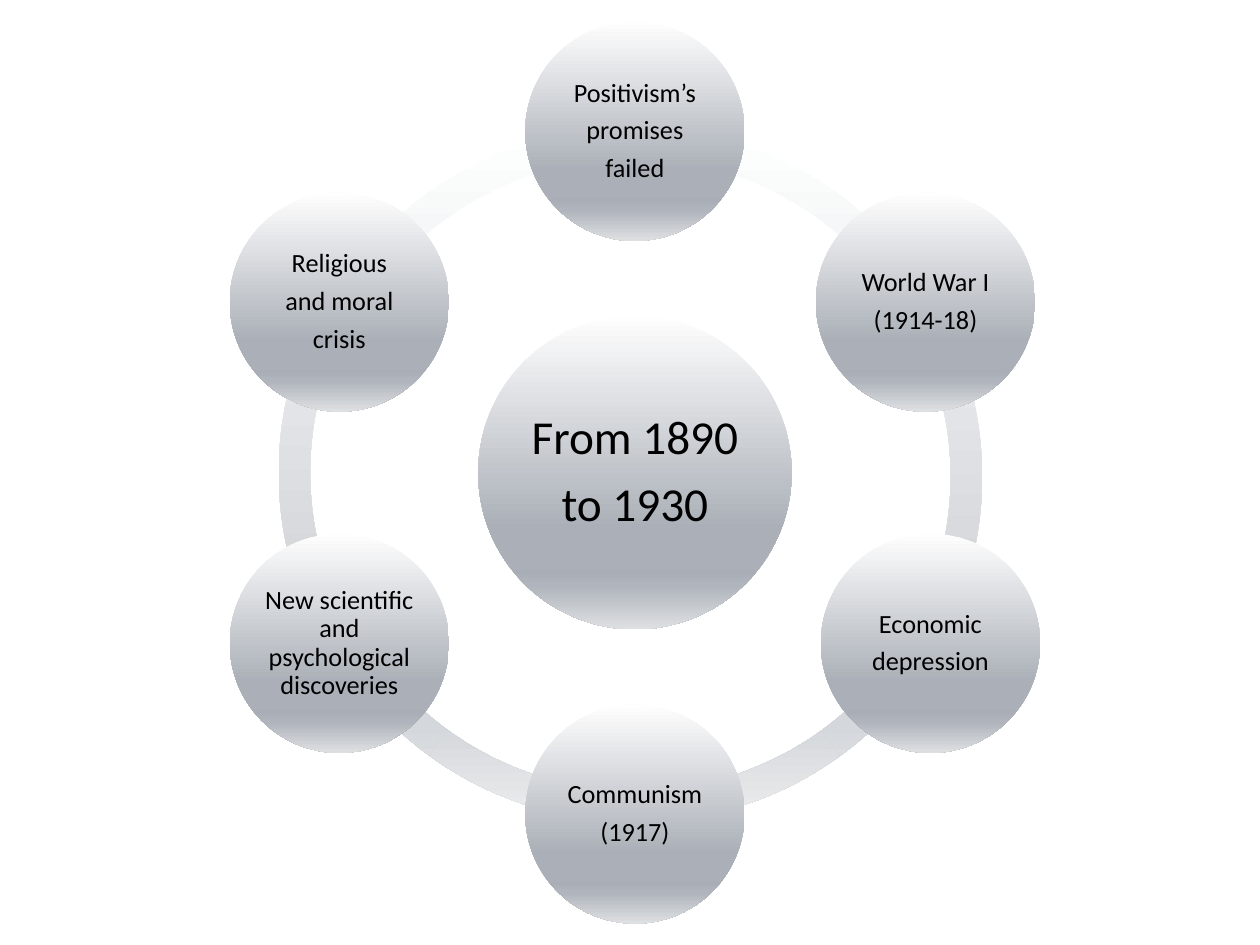
from copy import deepcopy
from math import cos, radians, sin

from pptx import Presentation
from pptx.dml.color import RGBColor
from pptx.enum.shapes import MSO_SHAPE as SHAPE
from pptx.enum.text import MSO_ANCHOR as ANCHOR, PP_ALIGN as ALIGN
from pptx.oxml.ns import qn
from pptx.util import Cm, Pt

STOPS = [0, 0.68, 0.81, 0.86, 1]
RING_COLOURS = ["FEFFFF", "D2D4D8", "D0D3D7", "D4D7DB", "ECEDEE"]
DISC_COLOURS = ["FEFEFE", "ABB0B8", "A8ADB6", "B0B5BD", "DEE0E2"]
CX, CY = 12.8, 9.53  # centre of the cycle, in cm
RING_SIZE = 14.1
ORBIT = 6.88


def rgb(colour):
    return RGBColor.from_string(colour)


def add_gradient_shape(kind, cx, cy, size, colours):
    """Add a square-framed shape around (cx, cy) in cm, shaded from top to bottom."""
    sp = slide.shapes.add_shape(kind, Cm(cx - size / 2), Cm(cy - size / 2), Cm(size), Cm(size))
    sp.shadow.inherit = False
    sp.line.fill.background()
    sp.fill.gradient()
    sp.fill.gradient_angle = 270
    stop_list = sp._element.spPr.find(qn("a:gradFill")).find(qn("a:gsLst"))
    for _ in range(len(STOPS) - len(stop_list)):
        stop_list.append(deepcopy(stop_list[0]))
    for stop, position, colour in zip(sp.fill.gradient_stops, STOPS, colours):
        stop.position = position
        stop.color.rgb = rgb(colour)
    return sp


prs = Presentation()
prs.slide_width, prs.slide_height = Cm(25.4), Cm(19.05)
slide = prs.slides.add_slide(prs.slide_layouts[6])

# Ring: start angle, end angle, horizontal and vertical shift
arcs = [(start, start + 36, 0, 0) for start in (126, 90, 54, 18)]
arcs += [(197.45, 17.46, -0.05, 0.08), (162.55, 198, -0.13, 0)]
for start, end, dx, dy in arcs:
    sp = add_gradient_shape(SHAPE.BLOCK_ARC, CX + dx, CY + dy, RING_SIZE, RING_COLOURS)
    # Angles are stored in 1/60000 degree, adjustments in 1/100000
    sp.adjustments[0] = start * 0.6
    sp.adjustments[1] = end * 0.6
    sp.adjustments[2] = 0.045

# Discs: centre, diameter, font size, inset, text
discs = [(CX, CY, 6.32, 27, 0.1, "From 1890\nto 1930")]
causes = [
    "Positivism’s\npromises\nfailed",
    "World War I\n(1914-18)",
    "Economic\ndepression",
    "Communism\n(1917)",
    "New scientific and psychological discoveries",
    "Religious\nand moral\ncrisis",
]
for i, cause in enumerate(causes):
    angle = radians(60 * i - 90)
    nudge = -0.1 if i == 1 else 0
    discs.append((CX + ORBIT * cos(angle) + nudge, CY + ORBIT * sin(angle), 4.42, 15, 0.05, cause))

for cx, cy, diameter, font_size, inset, text in discs:
    sp = add_gradient_shape(SHAPE.OVAL, cx, cy, diameter, DISC_COLOURS)
    tf = sp.text_frame
    tf.text = text
    tf.word_wrap = True
    tf.vertical_anchor = ANCHOR.MIDDLE
    tf.margin_left = tf.margin_right = tf.margin_top = tf.margin_bottom = Cm(inset)
    for p in tf.paragraphs:
        p.alignment = ALIGN.CENTER
        p.line_spacing = 0.9
        p.space_after = Pt(0.35 * font_size)
        for r in p.runs:
            r.font.name = "Calibri"
            r.font.size = Pt(font_size)
            r.font.color.rgb = rgb("000000")

prs.save("out.pptx")
